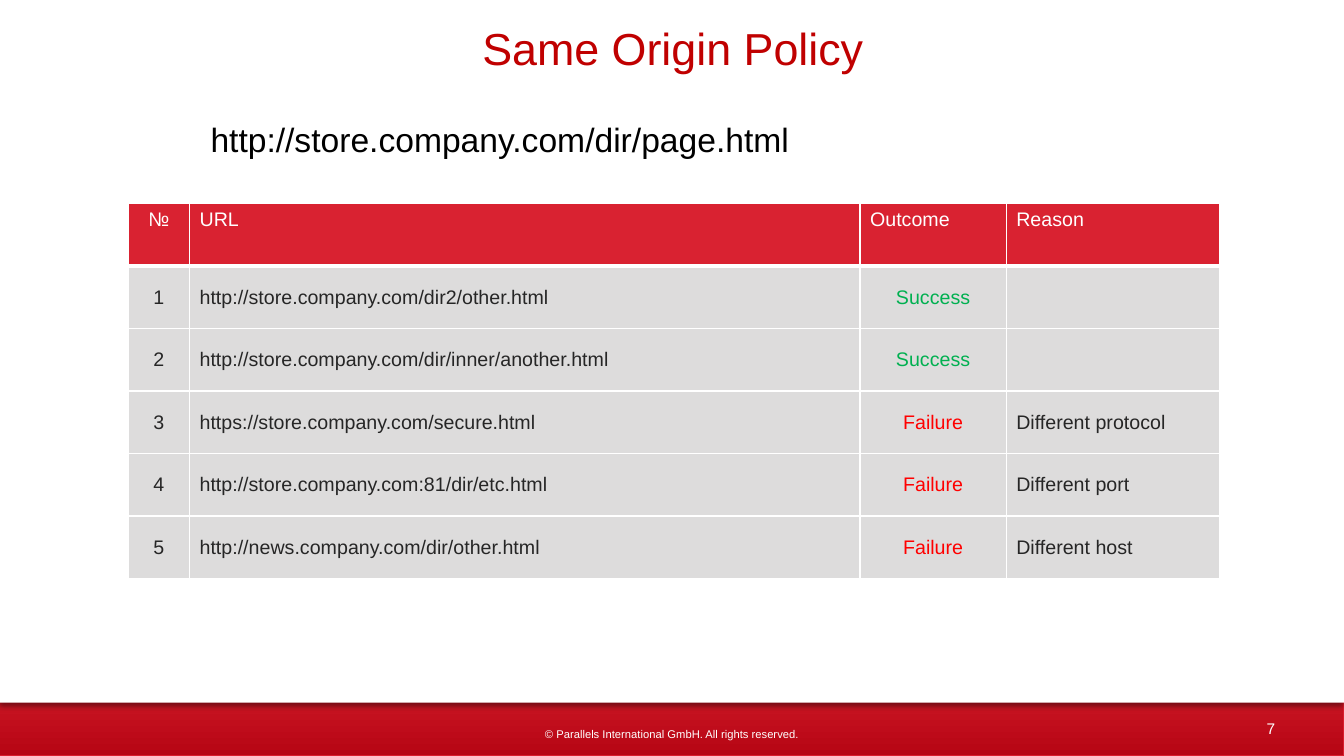
from lxml import etree
from pptx import Presentation
from pptx.dml.color import RGBColor
from pptx.enum.shapes import MSO_SHAPE
from pptx.enum.text import MSO_ANCHOR, PP_ALIGN
from pptx.oxml import parse_xml
from pptx.oxml.ns import nsdecls, qn
from pptx.util import Inches, Pt

RECTANGLE = MSO_SHAPE.RECTANGLE
TOP, MIDDLE = MSO_ANCHOR.TOP, MSO_ANCHOR.MIDDLE
LEFT, CENTER = PP_ALIGN.LEFT, PP_ALIGN.CENTER

FONT = "Arial"
WHITE, BLACK, DARK = "FFFFFF", "000000", "262626"
RED, DEEP_RED, TITLE_RED, GRAY = "D92231", "B60513", "C00000", "DDDCDC"
OUTCOME_COLORS = {"Success": "00B050", "Failure": "FF0000"}

HEADERS = ["№", "URL", "Outcome", "Reason"]
CHECKS = [
    ("http://store.company.com/dir2/other.html", "Success", ""),
    ("http://store.company.com/dir/inner/another.html", "Success", ""),
    ("https://store.company.com/secure.html", "Failure", "Different protocol"),
    ("http://store.company.com:81/dir/etc.html", "Failure", "Different port"),
    ("http://news.company.com/dir/other.html", "Failure", "Different host"),
]
COLUMN_WIDTHS = [0.61, 6.65, 1.45, 2.12]
ROW_HEIGHT = 0.62


def rgb(value):
    """Turn a hex string into a colour."""
    return RGBColor.from_string(value)


def write(frame, text, size, color, align=LEFT, anchor=TOP):
    """Fill a text frame or cell paragraph with one formatted run."""
    frame.vertical_anchor = anchor
    paragraph = frame.paragraphs[0]
    paragraph.alignment = align
    run = paragraph.add_run()
    run.text = text
    font = run.font
    font.name, font.size, font.bold = FONT, Pt(size), False
    font.color.rgb = rgb(color)


def add_shadow(shape, opacity, blur, distance):
    """Give a shape a black shadow that falls downwards."""
    shape.shadow.inherit = False
    effects = shape.element.spPr.find(qn("a:effectLst"))
    effects.append(parse_xml(
        f'<a:outerShdw {nsdecls("a")} blurRad="{Pt(blur)}" dist="{Pt(distance)}" '
        f'dir="5400000" rotWithShape="0"><a:srgbClr val="{BLACK}">'
        f'<a:alpha val="{opacity * 1000}"/></a:srgbClr></a:outerShdw>'))


def add_footer_band(slide):
    """Draw the red gradient band at the bottom of the slide."""
    band = slide.shapes.add_shape(
        RECTANGLE, 0, Inches(6.25), Inches(13.33), Inches(1.25))
    band.fill.gradient()
    band.fill.gradient_angle = 90
    for stop, position, color in zip(
            band.fill.gradient_stops, (0, 0.8), (DEEP_RED, RED)):
        stop.position = position
        stop.color.rgb = rgb(color)
    band.line.color.rgb = rgb("D91D2C")
    band.line.width = Pt(0.75)
    add_shadow(band, 35, 3.1, 1.8)


def add_page_panel(slide):
    """Draw the white panel that carries the content."""
    panel = slide.shapes.add_shape(
        RECTANGLE, 0, 0, Inches(13.33), Inches(6.97))
    panel.fill.solid()
    panel.fill.fore_color.rgb = rgb(WHITE)
    panel.line.fill.background()
    add_shadow(panel, 40, 4, 3)


def set_title(slide, text):
    """Place and format the title in front of the panel."""
    title = slide.shapes.title
    title.left, title.top = Inches(0.43), Inches(0.15)
    title.width, title.height = Inches(12.49), Inches(0.64)
    write(title.text_frame, text, 32, TITLE_RED, CENTER, MIDDLE)
    title.element.getparent().append(title.element)


def add_label(slide, box, text, size, color, align=LEFT, anchor=TOP,
              wrap=True, margin=0.05):
    """Add a text box with one line of text."""
    label = slide.shapes.add_textbox(*map(Inches, box))
    frame = label.text_frame
    frame.word_wrap = wrap
    frame.margin_top = frame.margin_bottom = Inches(margin)
    write(frame, text, size, color, align, anchor)


def set_borders(cell, bottom_width):
    """Draw white lines around a cell."""
    properties = cell._tc.get_or_add_tcPr()
    widths = {"lnL": 1, "lnR": 1, "lnT": 1, "lnB": bottom_width}
    for index, (side, width) in enumerate(widths.items()):
        line = etree.Element(qn(f"a:{side}"), w=str(Pt(width)))
        fill = etree.SubElement(line, qn("a:solidFill"))
        etree.SubElement(fill, qn("a:srgbClr"), val=WHITE)
        properties.insert(index, line)


def fill_cell(cell, text, fill, color, align, anchor, bottom_width):
    """Set the fill, borders and text of a table cell."""
    cell.fill.solid()
    cell.fill.fore_color.rgb = rgb(fill)
    set_borders(cell, bottom_width)
    if text:
        cell.vertical_anchor = anchor
        write(cell.text_frame, text, 14, color, align, anchor)


def add_policy_table(slide):
    """Add the table of URLs compared with the page's origin."""
    row_count = len(CHECKS) + 1
    table = slide.shapes.add_table(
        row_count, len(HEADERS), Inches(1.27), Inches(2.02),
        Inches(sum(COLUMN_WIDTHS)), Inches(ROW_HEIGHT * row_count)).table
    table.horz_banding = False
    for column, width in zip(table.columns, COLUMN_WIDTHS):
        column.width = Inches(width)
    for row in table.rows:
        row.height = Inches(ROW_HEIGHT)
    for index, header in enumerate(HEADERS):
        align = CENTER if index == 0 else LEFT
        fill_cell(table.cell(0, index), header, RED, WHITE, align, TOP, 3)
    for number, check in enumerate(CHECKS, start=1):
        for index, text in enumerate((str(number), *check)):
            align = CENTER if index in (0, 2) else LEFT
            color = OUTCOME_COLORS.get(text, DARK)
            fill_cell(table.cell(number, index), text, GRAY, color,
                      align, MIDDLE, 1)


def main():
    """Build and save the slide."""
    presentation = Presentation()
    presentation.slide_width = Inches(13.33)
    presentation.slide_height = Inches(7.5)
    slide = presentation.slides.add_slide(presentation.slide_layouts[5])
    add_footer_band(slide)
    add_page_panel(slide)
    add_label(slide, (12.33, 7.07, 0.55, 0.31), "7", 11, WHITE, CENTER, MIDDLE)
    add_label(slide, (5.12, 7.22, 3.09, 0.13),
              "© Parallels International GmbH. All rights reserved.",
              8, WHITE, CENTER, margin=0)
    set_title(slide, "Same Origin Policy")
    add_policy_table(slide)
    add_label(slide, (1.99, 1.13, 6, 0.5),
              "http://store.company.com/dir/page.html", 24, BLACK, wrap=False)
    presentation.save("out.pptx")


if __name__ == "__main__":
    main()
